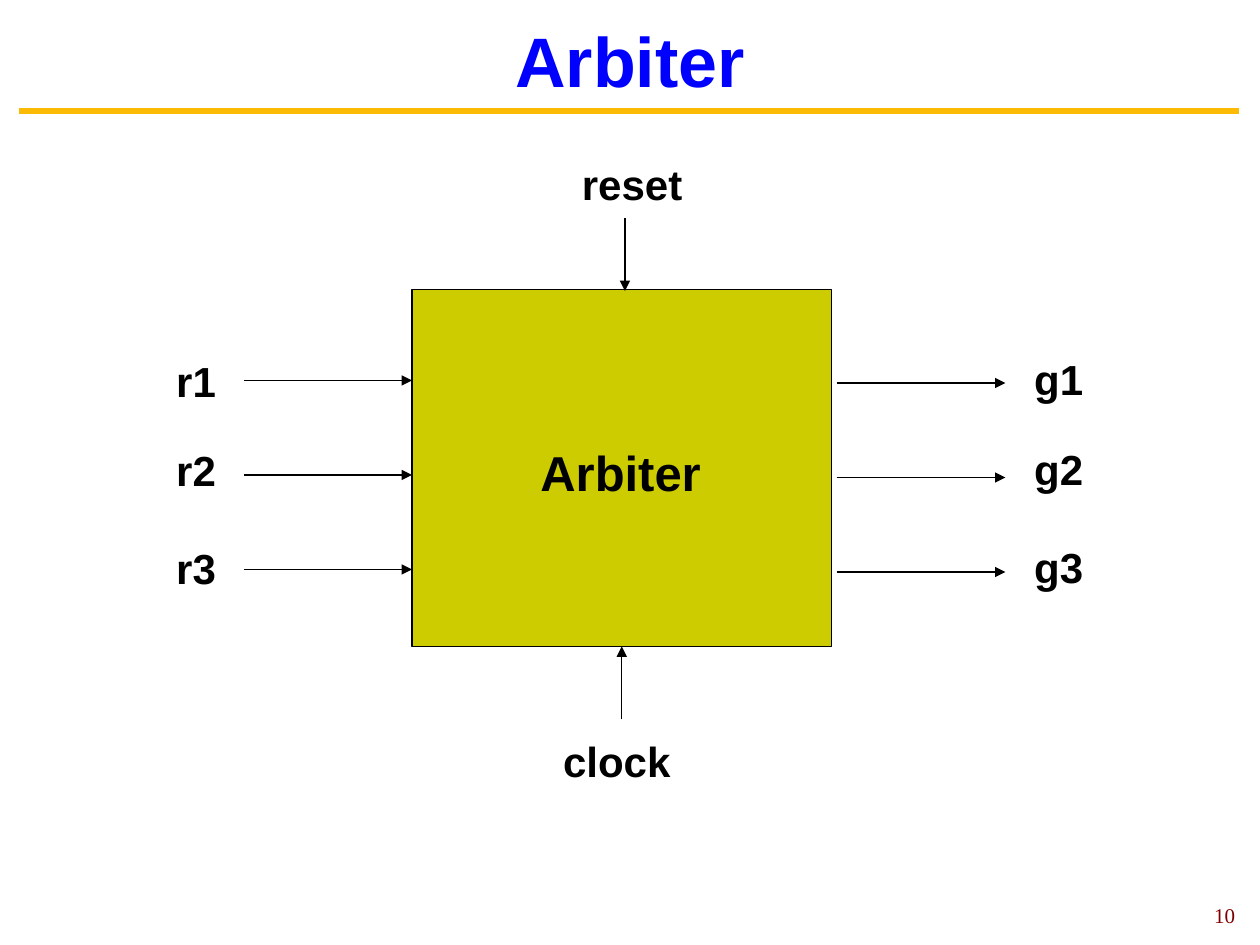
import dataclasses
import typing

import pptx
import pptx.dml.color
import pptx.enum.shapes
import pptx.enum.text
import pptx.oxml
import pptx.oxml.ns
import pptx.util

Inches = pptx.util.Inches
Anchor = pptx.enum.text.MSO_ANCHOR
Align = pptx.enum.text.PP_ALIGN
AutoSize = pptx.enum.text.MSO_AUTO_SIZE


@dataclasses.dataclass(frozen=True)
class Theme:
    title_color: str = "0000FF"
    rule_color: str = "FBBA03"
    block_color: str = "CCCC00"
    ink: str = "000000"
    number_color: str = "800000"
    font: str = "Arial"
    number_font: str = "Times New Roman"
    title_size: int = 40
    block_size: int = 28
    signal_size: int = 24
    number_size: int = 12
    rule_width: float = 3.75
    line_width: float = 0.75


@dataclasses.dataclass(frozen=True)
class Label:
    text: str
    left: float
    top: float
    width: float
    height: float = 0.5
    size: int = Theme.signal_size


@dataclasses.dataclass(frozen=True)
class Line:
    start: tuple[float, float]
    end: tuple[float, float]
    color: str = Theme.ink
    width: float = Theme.line_width
    arrow: bool = True


THEME = Theme()


def rgb(color: str) -> pptx.dml.color.RGBColor:
    return pptx.dml.color.RGBColor.from_string(color)


def set_attributes(target: typing.Any, values: dict[str, typing.Any]) -> None:
    for name, value in values.items():
        setattr(target, name, value)


def write_text(shape, text: str, size: int, color: str, font: str = THEME.font,
               bold: bool = True, alignment=Align.LEFT, **frame_values) -> None:
    frame = shape.text_frame
    frame.text = text
    set_attributes(frame, frame_values)
    paragraph = frame.paragraphs[0]
    paragraph.alignment = alignment
    run_font = paragraph.runs[0].font
    set_attributes(run_font, {"name": font, "size": pptx.util.Pt(size), "bold": bold})
    run_font.color.rgb = rgb(color)


def add_label(slide, label: Label) -> None:
    box = slide.shapes.add_textbox(
        *map(Inches, (label.left, label.top, label.width, label.height)))
    write_text(box, label.text, label.size, THEME.ink,
               word_wrap=False, auto_size=AutoSize.SHAPE_TO_FIT_TEXT)


def add_line(slide, line: Line):
    connector = slide.shapes.add_connector(
        pptx.enum.shapes.MSO_CONNECTOR.STRAIGHT, *map(Inches, line.start + line.end))
    connector.line.color.rgb = rgb(line.color)
    connector.line.width = pptx.util.Pt(line.width)
    if line.arrow:
        outline = connector.line._get_or_add_ln()
        head = pptx.oxml.parse_xml(
            f'<a:tailEnd {pptx.oxml.ns.nsdecls("a")} type="triangle"/>')
        outline.append(head)
    connector._element.spPr.append(
        pptx.oxml.parse_xml(f'<a:effectLst {pptx.oxml.ns.nsdecls("a")}/>'))
    return connector


def add_block(slide):
    block = slide.shapes.add_shape(pptx.enum.shapes.MSO_SHAPE.RECTANGLE,
                                   *map(Inches, (3.27, 2.3, 3.33, 2.83)))
    block.shadow.inherit = False
    block.fill.solid()
    block.fill.fore_color.rgb = rgb(THEME.block_color)
    block.line.color.rgb = rgb(THEME.ink)
    block.line.width = pptx.util.Pt(THEME.line_width)
    return block


def add_heading(slide) -> None:
    add_line(slide, Line((0.15, 0.88), (9.83, 0.88), THEME.rule_color,
                         THEME.rule_width, arrow=False))
    title = slide.shapes.title
    set_attributes(title, {"left": Inches(0.19), "top": Inches(0.14),
                           "width": Inches(9.62), "height": Inches(0.67)})
    write_text(title, "Arbiter", THEME.title_size, THEME.title_color,
               alignment=Align.CENTER, vertical_anchor=Anchor.MIDDLE,
               auto_size=AutoSize.NONE)


def add_page_number(slide) -> None:
    box = slide.shapes.add_textbox(*map(Inches, (9.59, 7.15, 0.26, 0.23)))
    margins = dict.fromkeys(
        ("margin_left", "margin_right", "margin_top", "margin_bottom"), Inches(0.02))
    write_text(box, "10", THEME.number_size, THEME.number_color, THEME.number_font,
               bold=False, alignment=Align.CENTER, vertical_anchor=Anchor.MIDDLE,
               word_wrap=False, **margins)


def main() -> None:
    presentation = pptx.Presentation()
    set_attributes(presentation, {"slide_width": Inches(10), "slide_height": Inches(7.5)})
    slide = presentation.slides.add_slide(presentation.slide_layouts[5])

    # Title, rule and page number
    add_heading(slide)
    add_page_number(slide)

    # Arbiter block
    block = add_block(slide)
    add_label(slide, Label("Arbiter", 4.19, 3.46, 1.48, 0.57, THEME.block_size))

    # Requests on the left, grants on the right
    for index, label_top in enumerate((2.77, 3.48, 4.26)):
        request_y = 3.02 + 0.75 * index
        grant_y = request_y + 0.02
        add_line(slide, Line((1.94, request_y), (3.27, request_y)))
        add_line(slide, Line((6.64, grant_y), (7.98, grant_y)))
        add_label(slide, Label(f"r{index + 1}", 1.3, label_top, 0.52))
        add_label(slide, Label(f"g{index + 1}", 8.11, label_top - 0.01, 0.59))

    # Reset above, clock below
    add_line(slide, Line((4.96, 1.73), (4.96, 2.31)))
    add_label(slide, Label("reset", 4.52, 1.21, 1))
    clock_arrow = add_line(slide, Line((4.93, 5.71), (4.93, 5.13)))
    clock_arrow.end_connect(block, 2)
    clock_arrow.begin_x = clock_arrow.end_x
    add_label(slide, Label("clock", 4.37, 5.79, 1.05))

    presentation.save("out.pptx")


if __name__ == "__main__":
    main()
